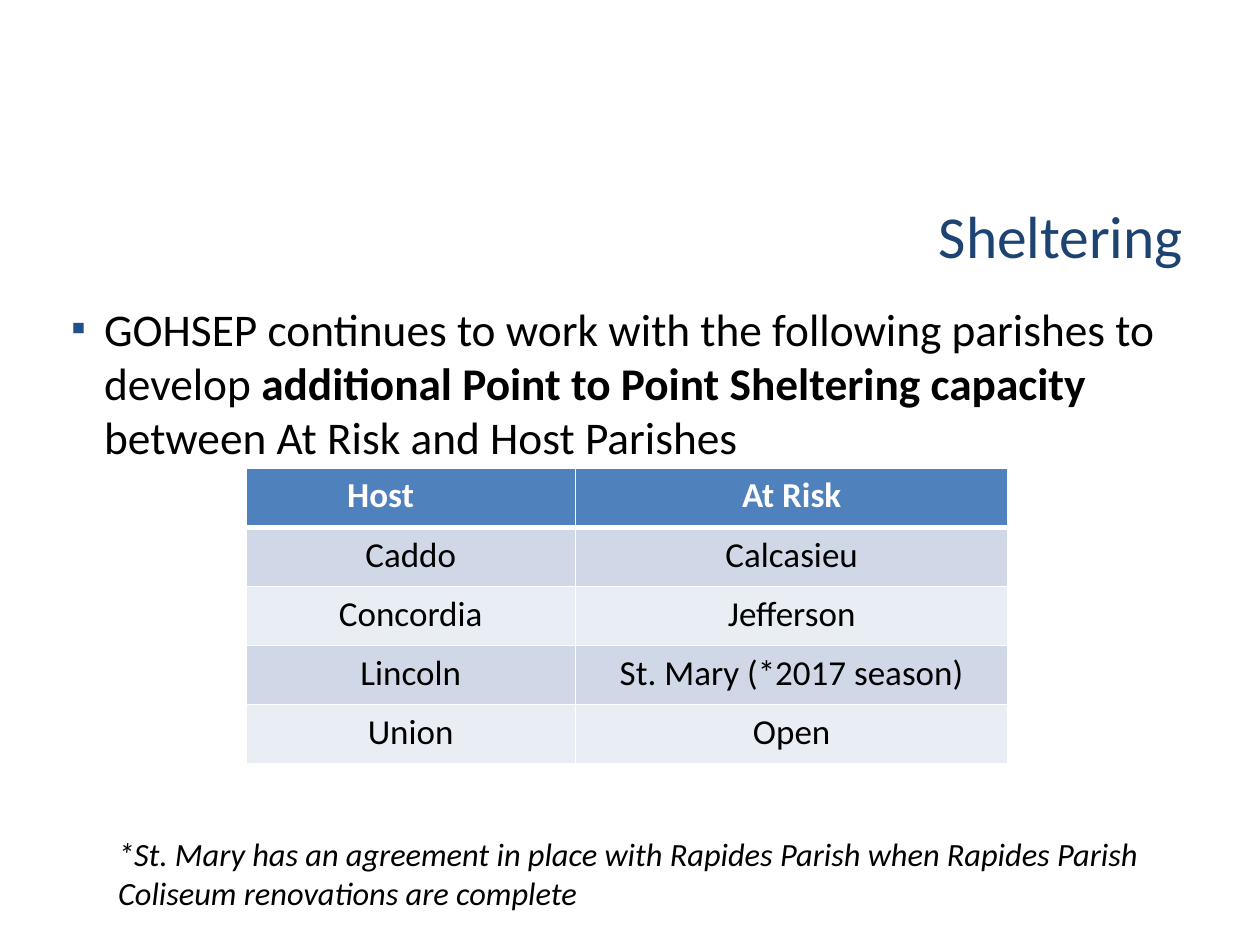
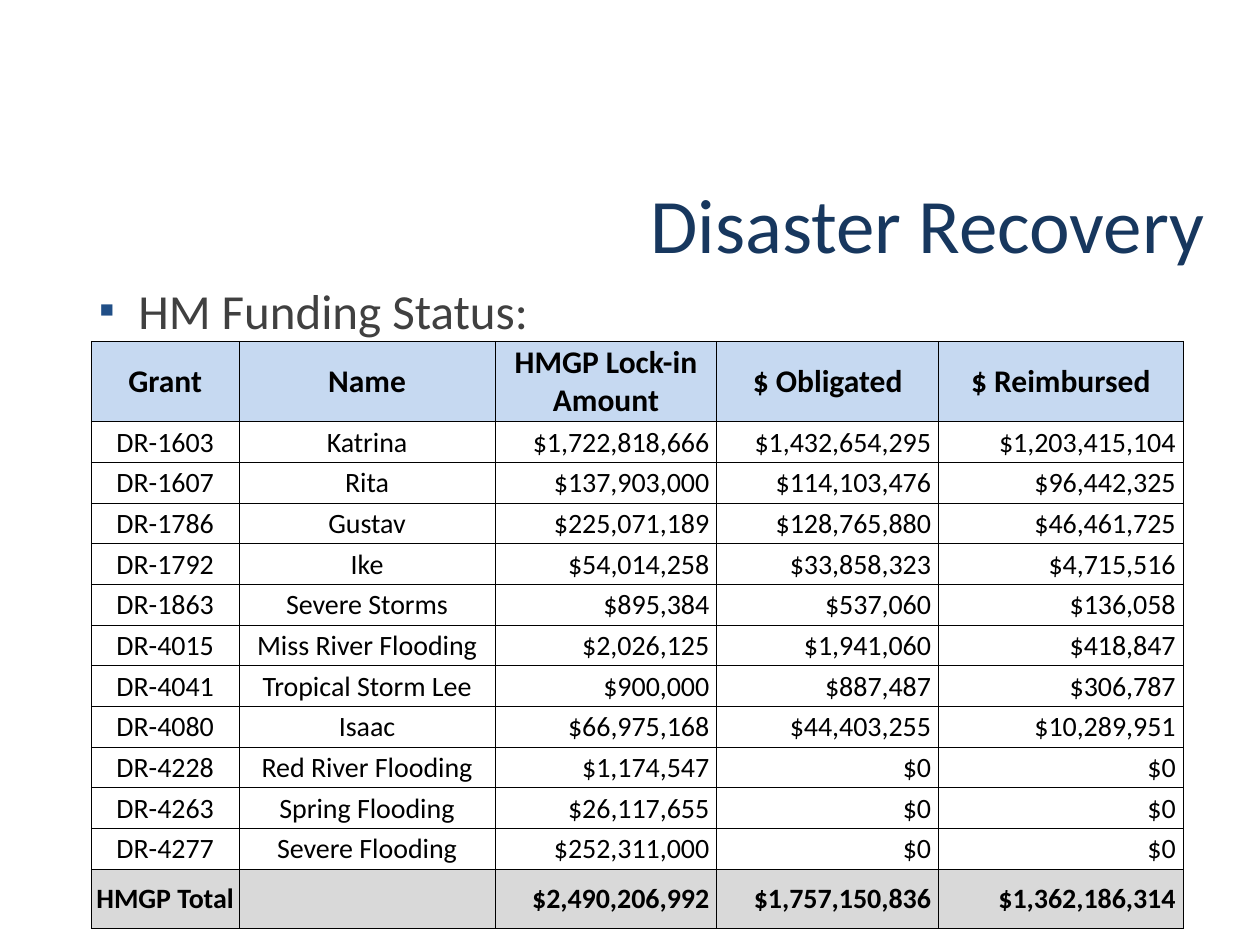
from lxml.etree import SubElement
from pptx import Presentation
from pptx.dml.color import RGBColor
from pptx.enum.text import MSO_ANCHOR as ANCHOR, PP_ALIGN as ALIGN
from pptx.oxml.ns import qn
from pptx.util import Cm, Pt

FONT = "Calibri"
COLORS = {
    "title": "1C4372", "title_dark": "17375E", "bullet": "214F87",
    "text": "000000", "gray_text": "404040", "white": "FFFFFF",
    "header": "4F81BD", "band_dark": "D0D8E8", "band_light": "E9EDF4",
    "grant_header": "C6D9F1", "total": "D9D9D9",
}


def add_run(p, text, size, color, bold=False, italic=False):
    r = p.add_run()
    r.text = text
    r.font.name, r.font.size = FONT, Pt(size)
    r.font.bold, r.font.italic = bold, italic
    r.font.color.rgb = RGBColor.from_string(COLORS[color])


def set_borders(cell, color, left=1, right=1, top=1, bottom=1):
    """Draw the four cell borders, widths in points; call before filling."""
    tcPr = cell._tc.get_or_add_tcPr()
    for side, width in zip("LRTB", (left, right, top, bottom)):
        ln = SubElement(tcPr, qn(f"a:ln{side}"), w=str(Pt(width)))
        fill = SubElement(ln, qn("a:solidFill"))
        SubElement(fill, qn("a:srgbClr"), val=COLORS[color])


prs = Presentation()
prs.slide_width, prs.slide_height = Cm(25.4), Cm(19.05)

# Each slide: title and one bullet, with their boxes in cm
slide_specs = [
    {"title": "Sheltering", "title_box": (1.24, 3.84, 22.86, 1.78),
     "title_size": 34, "title_color": "title",
     "body_box": (1.19, 5.94, 22.86, 3.5), "indent": (0.66, -0.66),
     "size": 25.9, "color": "text",
     "runs": [("GOHSEP continues to work with the following parishes to develop ", False),
              ("additional Point to Point Sheltering capacity", True),
              (" between At Risk and Host Parishes", False)]},
    {"title": "Disaster Recovery", "title_box": (0.79, 3.53, 23.75, 1.9),
     "title_size": 44, "title_color": "title_dark",
     "body_box": (1.12, 5.53, 23.24, 1.35), "indent": (1.42, -0.79),
     "size": 28, "color": "gray_text",
     "runs": [("HM Funding Status:", False)]},
]
slides = []
for item in slide_specs:
    s = prs.slides.add_slide(prs.slide_layouts[5])
    slides.append(s)

    title = s.shapes.title
    title.left, title.top, title.width, title.height = map(Cm, item["title_box"])
    title.text_frame.vertical_anchor = ANCHOR.MIDDLE
    p = title.text_frame.paragraphs[0]
    p.alignment = ALIGN.RIGHT
    add_run(p, item["title"], item["title_size"], item["title_color"])

    tf = s.shapes.add_textbox(*map(Cm, item["body_box"])).text_frame
    tf.word_wrap = True
    p = tf.paragraphs[0]
    pPr = p._p.get_or_add_pPr()
    margin, hanging = item["indent"]
    pPr.set("marL", str(Cm(margin)))
    pPr.set("indent", str(Cm(hanging)))
    bullet_color = SubElement(pPr, qn("a:buClr"))
    SubElement(bullet_color, qn("a:srgbClr"), val=COLORS["bullet"])
    SubElement(pPr, qn("a:buSzPct"), val="90000")
    SubElement(pPr, qn("a:buFont"), typeface=FONT)
    SubElement(pPr, qn("a:buChar"), char="▪")
    for text, bold in item["runs"]:
        add_run(p, text, item["size"], item["color"], bold)

sheltering, recovery = slides

# Sheltering: parish pairs
parishes = [
    ("Host", "At Risk"),
    ("Caddo", "Calcasieu"),
    ("Concordia", "Jefferson"),
    ("Lincoln", "St. Mary (*2017 season)"),
    ("Union", "Open"),
]
parish_widths = (6.64, 8.72)
row_height = 1.19
tbl = sheltering.shapes.add_table(
    len(parishes), 2, Cm(4.96), Cm(9.44),
    Cm(sum(parish_widths)), Cm(row_height * len(parishes))).table
tbl.first_row = tbl.horz_banding = False
for col, width in zip(tbl.columns, parish_widths):
    col.width = Cm(width)
for i, row in enumerate(parishes):
    tbl.rows[i].height = Cm(row_height)
    is_header = i == 0
    fill = "header" if is_header else "band_dark" if i % 2 else "band_light"
    for j, text in enumerate(row):
        cell = tbl.cell(i, j)
        set_borders(cell, "white", top=3 if i == 1 else 1, bottom=3 if is_header else 1)
        cell.fill.solid()
        cell.fill.fore_color.rgb = RGBColor.from_string(COLORS[fill])
        p = cell.text_frame.paragraphs[0]
        p.alignment = ALIGN.CENTER
        add_run(p, text, 20, "white" if is_header else "text", is_header)
tbl.cell(0, 0).margin_right = Cm(1.47)  # "Host" sits left of the column centre

tf = sheltering.shapes.add_textbox(Cm(2.13), Cm(16.7), Cm(21.92), Cm(1.9)).text_frame
tf.word_wrap = True
add_run(tf.paragraphs[0],
        "*St. Mary has an agreement in place with Rapides Parish when "
        "Rapides Parish Coliseum renovations are complete",
        18.5, "text", italic=True)

# Disaster Recovery: funding by grant
grants = [
    ("Grant", "Name", "HMGP Lock-in Amount", "$ Obligated", "$ Reimbursed"),
    ("DR-1603", "Katrina", 1722818666, 1432654295, 1203415104),
    ("DR-1607", "Rita", 137903000, 114103476, 96442325),
    ("DR-1786", "Gustav", 225071189, 128765880, 46461725),
    ("DR-1792", "Ike", 54014258, 33858323, 4715516),
    ("DR-1863", "Severe Storms", 895384, 537060, 136058),
    ("DR-4015", "Miss River Flooding", 2026125, 1941060, 418847),
    ("DR-4041", "Tropical Storm Lee", 900000, 887487, 306787),
    ("DR-4080", "Isaac", 66975168, 44403255, 10289951),
    ("DR-4228", "Red River Flooding", 1174547, 0, 0),
    ("DR-4263", "Spring Flooding", 26117655, 0, 0),
    ("DR-4277", "Severe Flooding", 252311000, 0, 0),
    ("HMGP Total", "", 2490206992, 1757150836, 1362186314),
]
grant_widths = (2.98, 5.16, 4.47, 4.47, 4.93)
grant_heights = [1.62] + [0.82] * (len(grants) - 2) + [1.19]
tbl = recovery.shapes.add_table(
    len(grants), len(grant_widths), Cm(1.84), Cm(6.88),
    Cm(sum(grant_widths)), Cm(sum(grant_heights))).table
tbl.first_row = tbl.horz_banding = False
for col, width in zip(tbl.columns, grant_widths):
    col.width = Cm(width)
for i, row in enumerate(grants):
    tbl.rows[i].height = Cm(grant_heights[i])
    is_header, is_total = i == 0, i == len(grants) - 1
    for j, value in enumerate(row):
        is_amount = isinstance(value, int)
        cell = tbl.cell(i, j)
        set_borders(cell, "text", 0.5, 0.5, 0.5, 0.5)
        if is_header or is_total:
            cell.fill.solid()
            cell.fill.fore_color.rgb = RGBColor.from_string(
                COLORS["grant_header" if is_header else "total"])
        else:
            cell.fill.background()
        cell.vertical_anchor = ANCHOR.MIDDLE
        cell.margin_left = cell.margin_top = Cm(0.02)
        cell.margin_right = Cm(0.15 if is_amount else 0.02)
        cell.margin_bottom = 0
        p = cell.text_frame.paragraphs[0]
        p.alignment = ALIGN.RIGHT if is_amount else ALIGN.CENTER
        if value != "":
            add_run(p, f"${value:,}" if is_amount else value,
                    18 if is_header else 16, "text", is_header or is_total)

prs.save("out.pptx")
